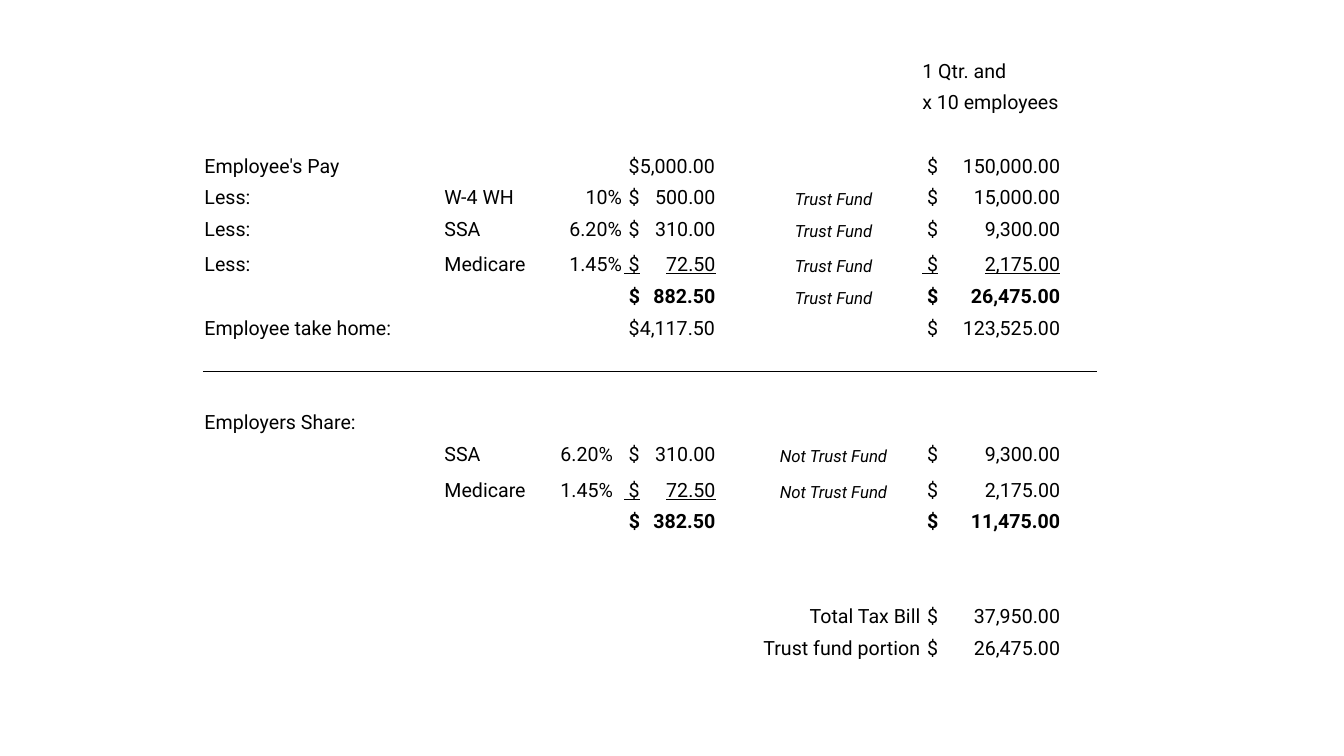
from lxml import etree
from pptx import Presentation
from pptx.dml.color import RGBColor
from pptx.enum import text
from pptx.oxml import ns
from pptx.util import Pt

# Content: label, tax, rate, per employee, fund status, quarter for ten employees
PAYROLL = [
    ("", "", "", "", "", "1 Qtr. and"),
    ("", "", "", "", "", "x 10 employees"),
    (),
    ("Employee's Pay", "", "", " $5,000.00", "", " $\t150,000.00"),
    ("Less:", "W-4 WH", "10%", " $\t500.00", "Trust Fund", " $\t15,000.00"),
    ("Less:", "SSA", "6.20%", " $\t310.00", "Trust Fund", " $\t9,300.00"),
    ("Less:", "Medicare", "1.45%", " $\t72.50", "Trust Fund", " $\t2,175.00"),
    ("", "", "", " $\t882.50", "Trust Fund", " $\t26,475.00"),
    ("Employee take home:", "", "", " $4,117.50", "", " $\t123,525.00"),
    (),
    (),
    ("Employers Share:",),
    ("", "SSA", "6.20%", " $\t310.00", "Not Trust Fund", " $\t9,300.00"),
    ("", "Medicare", "1.45%", " $\t72.50", "Not Trust Fund", " $\t2,175.00"),
    ("", "", "", " $\t382.50", "", " $\t11,475.00"),
    (),
    (),
    ("", "", "", "Total Tax Bill", "", " $\t37,950.00"),
    ("", "", "", "Trust fund portion", "", " $\t26,475.00"),
]
COLUMN_WIDTHS = [171.4, 76.4, 51.8, 87.8, 125.4, 125.4]
LABEL, TAX, RATE, EMPLOYEE, FUND, QUARTER = range(6)
AMOUNT_TABS = {EMPLOYEE: 65.5, QUARTER: 98.5}
MEDICARE_ROWS = (6, 13)
UNDERLINED = {(6, EMPLOYEE), (6, QUARTER), (13, EMPLOYEE)}
SUBTOTAL_ROWS = (7, 14)
BILL_ROWS = (17, 18)
EMPLOYER_START = 10
LEFT, TOP = 145.4, 36.7
ROW_HEIGHT, MEDICARE_HEIGHT = 22.6, 25.4
BLACK = "000000"


def color(value):
    return RGBColor.from_string(value)


def add_rule(cell, side):
    """Draw a thin black border on one side of a cell."""
    border = etree.Element(ns.qn("a:" + side), w=str(Pt(0.5)))
    fill = etree.SubElement(border, ns.qn("a:solidFill"))
    etree.SubElement(fill, ns.qn("a:srgbClr"), val=BLACK)
    cell._tc.get_or_add_tcPr().insert(0, border)


def add_amount_tab(paragraph, position):
    """Right-align the figure that follows the currency sign."""
    tabs = etree.SubElement(paragraph._p.get_or_add_pPr(), ns.qn("a:tabLst"))
    etree.SubElement(tabs, ns.qn("a:tab"), pos=str(Pt(position)), algn="r")


def alignment(row, column):
    if column == FUND or (column == RATE and row > EMPLOYER_START):
        return text.PP_ALIGN.CENTER
    if column == RATE or (column == EMPLOYEE and row in BILL_ROWS):
        return text.PP_ALIGN.RIGHT
    return text.PP_ALIGN.LEFT


def fill_cell(cell, row, column, wording):
    cell.fill.background()
    cell.vertical_anchor = text.MSO_ANCHOR.BOTTOM
    cell.margin_left = cell.margin_right = cell.margin_top = Pt(0.7)
    cell.margin_bottom = 0
    paragraph = cell.text_frame.paragraphs[0]
    if not wording:
        etree.SubElement(paragraph._p, ns.qn("a:endParaRPr"), sz="1400")
        return
    paragraph.alignment = alignment(row, column)
    if "\t" in wording:
        add_amount_tab(paragraph, AMOUNT_TABS[column])
    run = paragraph.add_run()
    run.text = wording
    font = run.font
    font.name = "Roboto"
    font.size = Pt(12 if column == FUND else 14)
    font.color.rgb = color(BLACK)
    font.italic = column == FUND
    font.bold = row in SUBTOTAL_ROWS and column != FUND
    font.underline = (row, column) in UNDERLINED


# Slide
deck = Presentation()
deck.slide_width, deck.slide_height = Pt(960), Pt(540)
slide = deck.slides.add_slide(deck.slide_layouts[6])

# Table grid
heights = [MEDICARE_HEIGHT if row in MEDICARE_ROWS else ROW_HEIGHT
           for row in range(len(PAYROLL))]
payroll = slide.shapes.add_table(
    len(PAYROLL), len(COLUMN_WIDTHS), Pt(LEFT), Pt(TOP),
    Pt(sum(COLUMN_WIDTHS)), Pt(sum(heights))).table
payroll.first_row = payroll.horz_banding = False
for column, width in zip(payroll.columns, COLUMN_WIDTHS):
    column.width = Pt(width)
for row, height in zip(payroll.rows, heights):
    row.height = Pt(height)

# Wording and figures
for row, entries in enumerate(PAYROLL):
    for column in range(len(COLUMN_WIDTHS)):
        wording = entries[column] if column < len(entries) else ""
        fill_cell(payroll.cell(row, column), row, column, wording)

# Wide labels for the tax bill
for row in BILL_ROWS:
    payroll.cell(row, EMPLOYEE).merge(payroll.cell(row, FUND))

# Rule between the employee's and the employer's part
for column in range(len(COLUMN_WIDTHS)):
    add_rule(payroll.cell(EMPLOYER_START - 1, column), "lnB")
    add_rule(payroll.cell(EMPLOYER_START, column), "lnT")

deck.save("out.pptx")
